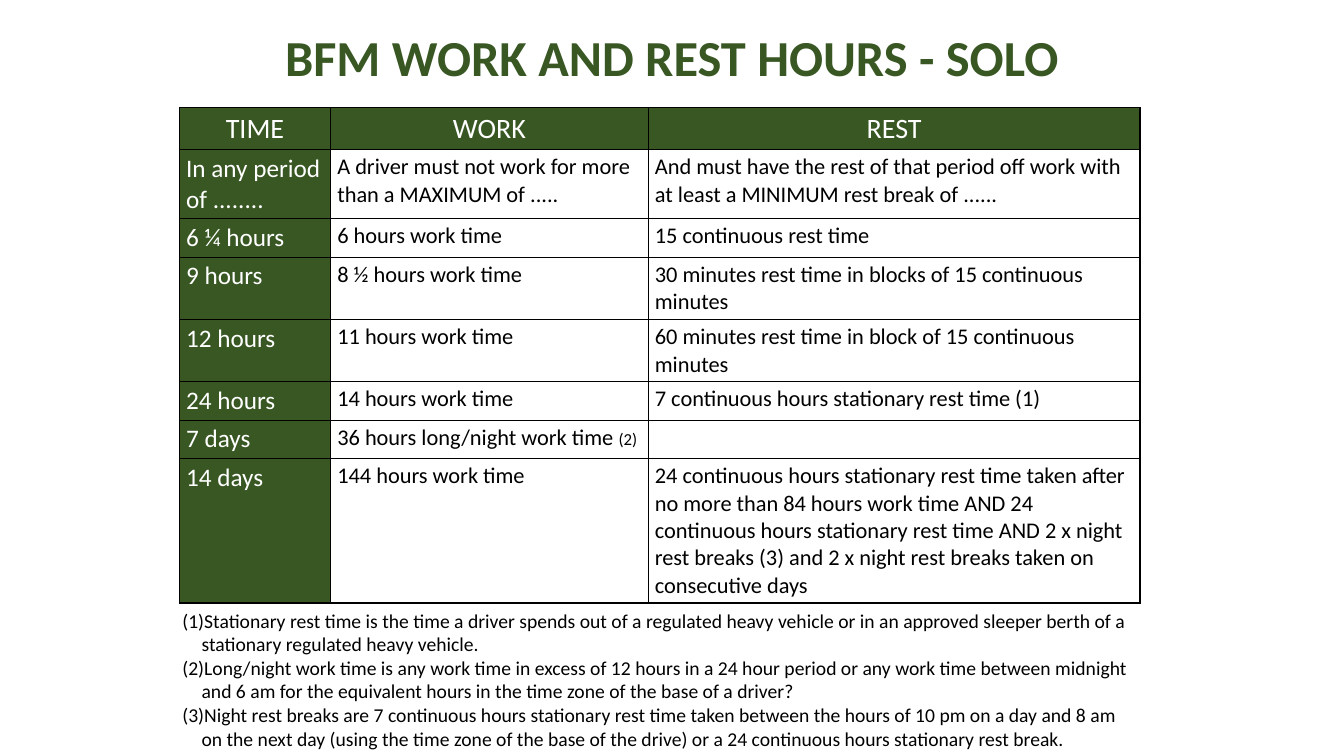
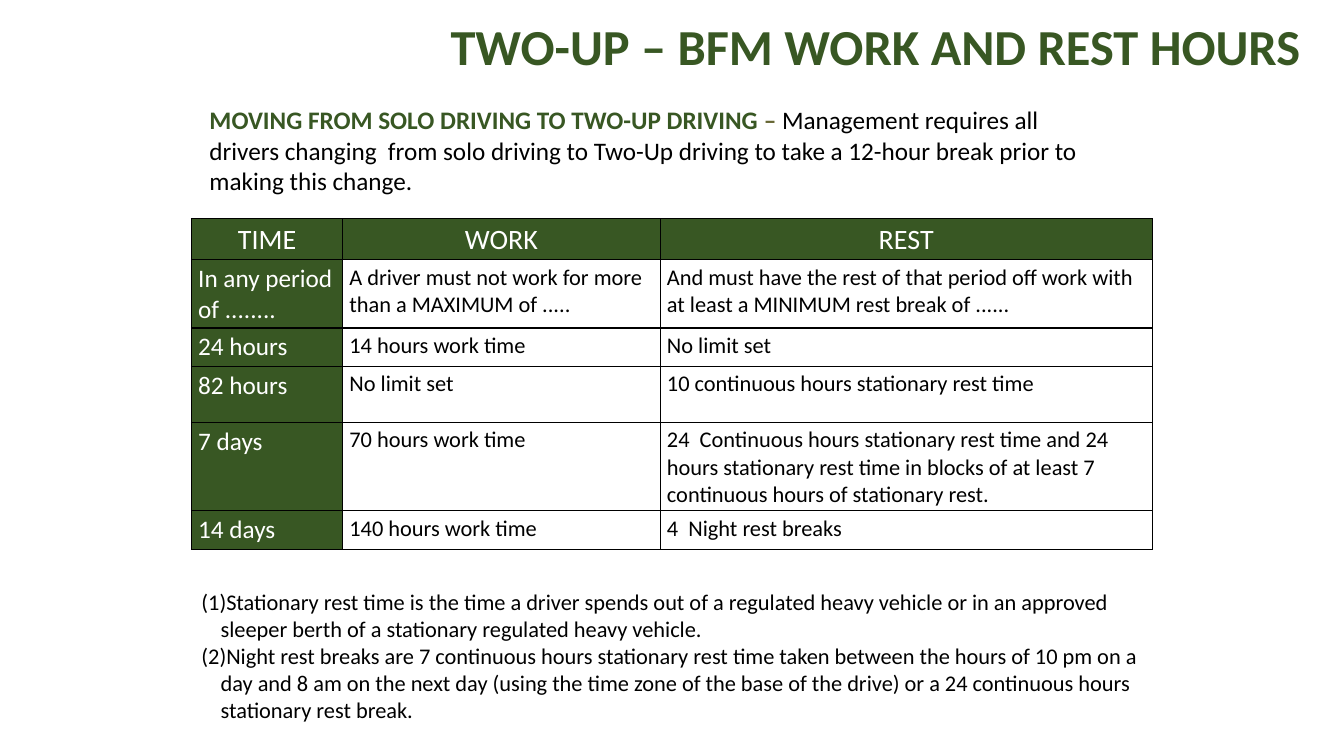
import pptx
import pptx.util
import pptx.dml.color
import pptx.enum.text
import pptx.oxml
import pptx.oxml.ns

SLIDE_W = pptx.util.Inches(13.33)
SLIDE_H = pptx.util.Inches(7.5)
FONT = "Calibri"
GREEN, OLIVE, BLACK, WHITE = "385723", "666633", "000000", "FFFFFF"
ALIGN = pptx.enum.text.PP_ALIGN

COLUMNS = (11.25, 23.63, 36.6)
LINE, DOUBLE, TALL = 5.07, 7.47, 16.93
HEADINGS = [
    ("TIME", "WORK", "REST"),
    ("In any period of ........",
     "A driver must not work for more than a MAXIMUM of .....",
     "And must have the rest of that period off work with at least a MINIMUM rest break of ......"),
]
SOLO_ROWS = HEADINGS + [
    ("6 ¼ hours", "6 hours work time", "15 continuous rest time"),
    ("9 hours", "8 ½ hours work time", "30 minutes rest time in blocks of 15 continuous minutes"),
    ("12 hours", "11 hours work time", "60 minutes rest time in block of 15 continuous minutes"),
    ("24 hours", "14 hours work time", "7 continuous hours stationary rest time (1)"),
    ("7 days", "36 hours long/night work time ", ""),
    ("14 days", "144 hours work time",
     "24 continuous hours stationary rest time taken after no more than 84 hours work time AND 24 "
     "continuous hours stationary rest time AND 2 x night rest breaks (3) and 2 x night rest breaks "
     "taken on consecutive days"),
]
TWO_UP_ROWS = HEADINGS + [
    ("24 hours", "14 hours work time", "No limit set"),
    ("82 hours", "No limit set", "10 continuous hours stationary rest time"),
    ("7 days", "70 hours work time",
     "24  Continuous hours stationary rest time and 24  hours stationary rest time in blocks of at "
     "least 7 continuous hours of stationary rest."),
    ("14 days", "140 hours work time", "4  Night rest breaks"),
]
STATIONARY = ("Stationary rest time is the time a driver spends out of a regulated heavy vehicle or in an "
              "approved sleeper berth of a stationary regulated heavy vehicle.")
LONG_NIGHT = ("Long/night work time is any work time in excess of 12 hours in a 24 hour period or any work "
              "time between midnight and 6 am for the equivalent hours in the time zone of the base of a driver?")
NIGHT_REST = ("Night rest breaks are 7 continuous hours stationary rest time taken between the hours of 10 pm "
              "on a day and 8 am on the next day (using the time zone of the base of the drive) or a 24 "
              "continuous hours stationary rest break.")


def across(share):
    """Turn a percentage of the slide width into a length."""
    return int(SLIDE_W * share / 100)


def down(share):
    """Turn a percentage of the slide height into a length."""
    return int(SLIDE_H * share / 100)


def color(value):
    """Return the colour for a hex string."""
    return pptx.dml.color.RGBColor.from_string(value)


def format_run(r, size, hex_color, bold=False):
    """Set the font of one run."""
    r.font.name = FONT
    r.font.size = pptx.util.Pt(size)
    r.font.bold = bold
    r.font.color.rgb = color(hex_color)


def add_run(p, text, size, hex_color, bold=False):
    """Append a formatted run to a paragraph."""
    r = p.add_run()
    r.text = text
    format_run(r, size, hex_color, bold)


def add_text(s, left, top, width, height):
    """Add a wrapping text box placed in slide percentages and return its frame."""
    sp = s.shapes.add_textbox(across(left), down(top), across(width), down(height))
    sp.text_frame.word_wrap = True
    return sp.text_frame


def add_title(s, text, left, top, width):
    """Add the right-aligned green slide title."""
    p = add_text(s, left, top, width, 5.33).paragraphs[0]
    p.alignment = ALIGN.RIGHT
    add_run(p, text, 36, GREEN, True)


def indent(p, margin, first=0):
    """Set the left margin and first-line indent of a paragraph."""
    pPr = p._p.get_or_add_pPr()
    pPr.set("marL", str(across(margin)))
    pPr.set("indent", str(across(first)))
    return pPr


def add_notes(s, notes, size, left, top, width, height):
    """Add automatically numbered footnotes."""
    tf = add_text(s, left, top, width, height)
    tf.text = "\n".join(notes)
    for p in tf.paragraphs:
        pPr = indent(p, 1.43, -1.43)
        pPr.append(pptx.oxml.parse_xml(
            f'<a:buAutoNum {pptx.oxml.ns.nsdecls("a")} type="arabicParenBoth"/>'))
        format_run(p.runs[0], size, BLACK)


def add_borders(cell):
    """Draw a thin black line on every side of a cell."""
    tcPr = cell._tc.get_or_add_tcPr()
    for side in "LRTB":
        tcPr.append(pptx.oxml.parse_xml(
            f'<a:ln{side} {pptx.oxml.ns.nsdecls("a")} w="12700"><a:solidFill>'
            f'<a:srgbClr val="{BLACK}"/></a:solidFill></a:ln{side}>'))


def fill_cell(cell, text, is_header, is_period):
    """Write and style one cell of an hours table."""
    cell.margin_left = cell.margin_right = across(0.5)
    cell.margin_top = cell.margin_bottom = down(0.5)
    add_borders(cell)
    if is_header or is_period:
        cell.fill.solid()
        cell.fill.fore_color.rgb = color(GREEN)
    else:
        cell.fill.background()
    p = cell.text_frame.paragraphs[0]
    if is_header:
        p.alignment = ALIGN.CENTER
    if text:
        size = 20 if is_header else 18 if is_period else 16
        add_run(p, text, size, WHITE if is_header or is_period else BLACK)


def add_hours_table(s, rows, heights, left, top):
    """Add a table of time, work and rest, and return it."""
    frame = s.shapes.add_table(len(rows), len(COLUMNS), across(left), down(top),
                               across(sum(COLUMNS)), down(sum(heights)))
    table = frame.table
    table.horz_banding = False
    for column, width in zip(table.columns, COLUMNS):
        column.width = across(width)
    for i, (row, height, texts) in enumerate(zip(table.rows, heights, rows)):
        row.height = down(height)
        for j, text in enumerate(texts):
            fill_cell(row.cells[j], text, i == 0, j == 0)
    return table


def add_intro(s):
    """Add the paragraph on moving to two-up driving."""
    p = add_text(s, 13.2, 13.2, 70.28, 7.33).paragraphs[0]
    indent(p, 1.65)
    add_run(p, "MOVING FROM SOLO DRIVING TO TWO-UP DRIVING ", 18, GREEN, True)
    add_run(p, "– ", 18, OLIVE, True)
    add_run(p, "Management requires all drivers changing  from solo driving to Two-Up driving "
               "to take a 12-hour break prior to making this change.", 18, BLACK)


def build_solo(s):
    """Build the solo hours slide."""
    heights = (LINE, DOUBLE, LINE, DOUBLE, DOUBLE, LINE, LINE, TALL)
    table = add_hours_table(s, SOLO_ROWS, heights, 13.35, 14.27)
    add_run(table.cell(6, 1).text_frame.paragraphs[0], "(2)", 12, BLACK)
    add_notes(s, (STATIONARY, LONG_NIGHT, NIGHT_REST), 14, 12.83, 79.87, 72.7, 20.13)
    add_title(s, "BFM WORK AND REST HOURS - SOLO", 14.55, 2.8, 64.97)


def build_two_up(s):
    """Build the two-up hours slide."""
    add_notes(s, (STATIONARY, NIGHT_REST), 16, 14.25, 77.2, 72.85, 19.33)
    add_title(s, "TWO-UP – BFM WORK AND REST HOURS", 25.8, 1.33, 71.72)
    add_intro(s)
    add_hours_table(s, TWO_UP_ROWS, (LINE, DOUBLE, LINE, DOUBLE, DOUBLE, LINE), 14.25, 28.93)


def main():
    """Build and save the presentation."""
    prs = pptx.Presentation()
    prs.slide_width, prs.slide_height = SLIDE_W, SLIDE_H
    for build in (build_solo, build_two_up):
        build(prs.slides.add_slide(prs.slide_layouts[6]))
    prs.save("out.pptx")


if __name__ == "__main__":
    main()
